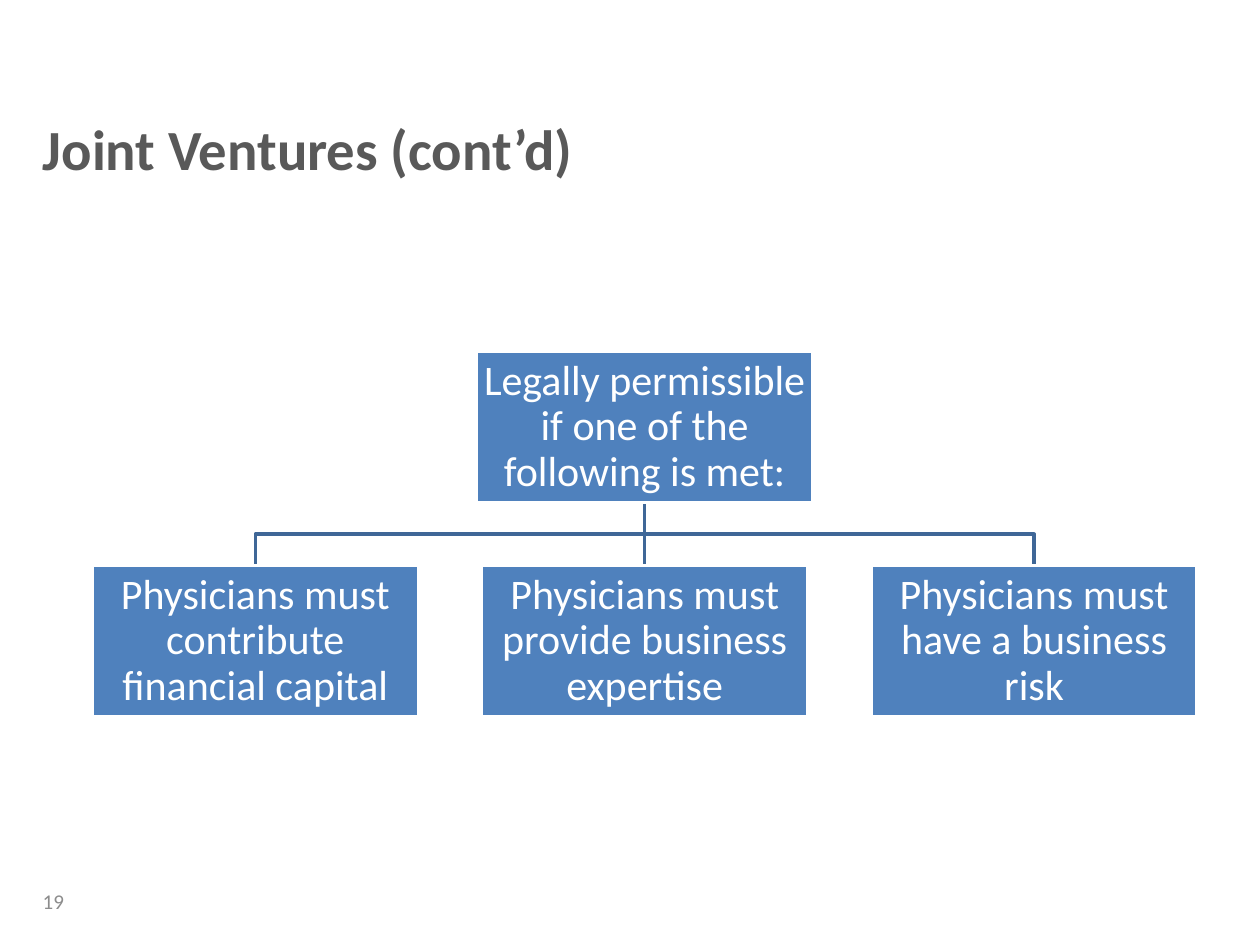
import pptx
import pptx.dml.color
import pptx.enum.shapes
import pptx.enum.text
import pptx.oxml.ns
import pptx.util
from lxml import etree

Pt = pptx.util.Pt
RGBColor = pptx.dml.color.RGBColor
PP_ALIGN = pptx.enum.text.PP_ALIGN
MSO_ANCHOR = pptx.enum.text.MSO_ANCHOR

TITLE_GRAY = RGBColor(0x59, 0x59, 0x59)
NUMBER_GRAY = RGBColor(0x8C, 0x8C, 0x8C)
BOX_BLUE = RGBColor(0x4F, 0x81, 0xBD)
LINE_BLUE = RGBColor(0x3F, 0x67, 0x97)
WHITE = RGBColor(0xFF, 0xFF, 0xFF)

CENTER_X = 368.4
BOX_HEIGHT = 86.4
ROOT_TOP, ROOT_WIDTH = 200.9, 192.2
CHILD_TOP, CHILD_WIDTH, CHILD_STEP = 323.3, 186.5, 222.5
ROOT_BOTTOM = ROOT_TOP + BOX_HEIGHT

ROOT_TEXT = "Legally permissible if one of the following is met:"
CHILD_TEXTS = [
    "Physicians must contribute financial capital",
    "Physicians must provide business expertise",
    "Physicians must have a business risk",
]


def set_text(sp, text, size, color, align=PP_ALIGN.LEFT, anchor=MSO_ANCHOR.MIDDLE):
    tf = sp.text_frame
    tf.word_wrap = True
    tf.auto_size = pptx.enum.text.MSO_AUTO_SIZE.NONE
    tf.vertical_anchor = anchor
    p = tf.paragraphs[0]
    p.text = text
    p.alignment = align
    p.font.name = "Calibri"
    p.font.size = Pt(size)
    p.font.color.rgb = color
    return p


def add_title(s, text):
    sp = s.shapes.title
    sp.left, sp.top, sp.width, sp.height = Pt(17.3), Pt(64.8), Pt(666.7), Pt(78.5)
    p = set_text(sp, text, 32.4, TITLE_GRAY, anchor=MSO_ANCHOR.TOP)
    p.font.bold = True
    sp.text_frame.margin_top = 0


def add_slide_number(s, text):
    sp = s.shapes.add_textbox(Pt(17.3), Pt(500.4), Pt(142.6), Pt(28.8))
    set_text(sp, text, 12, NUMBER_GRAY)


def add_box(s, center_x, top, width, text):
    sp = s.shapes.add_shape(
        pptx.enum.shapes.MSO_SHAPE.RECTANGLE,
        Pt(center_x - width / 2), Pt(top), Pt(width), Pt(BOX_HEIGHT))
    sp.shadow.inherit = False
    sp.fill.solid()
    sp.fill.fore_color.rgb = BOX_BLUE
    sp.line.color.rgb = WHITE
    sp.line.width = Pt(2)
    p = set_text(sp, text, 24, WHITE, PP_ALIGN.CENTER)
    p.line_spacing = 0.9
    tf = sp.text_frame
    tf.margin_left = tf.margin_right = tf.margin_top = tf.margin_bottom = Pt(1.2)
    return sp


def style_line(sp):
    sp.line.color.rgb = LINE_BLUE
    sp.line.width = Pt(2)


def add_branch(s, child_x):
    """Draw the bent line from under the root box to an outer child box."""
    middle = (ROOT_BOTTOM + CHILD_TOP) / 2
    builder = s.shapes.build_freeform(Pt(CENTER_X), Pt(ROOT_BOTTOM))
    builder.add_line_segments(
        [(Pt(CENTER_X), Pt(middle)), (Pt(child_x), Pt(middle)),
         (Pt(child_x), Pt(CHILD_TOP))], close=False)
    sp = builder.convert_to_shape()
    sp.shadow.inherit = False
    sp.fill.background()
    style_line(sp)


def add_stem(s):
    """Draw the straight line from the root box to the middle child box."""
    sp = s.shapes.add_connector(
        pptx.enum.shapes.MSO_CONNECTOR.STRAIGHT,
        Pt(CENTER_X), Pt(ROOT_BOTTOM), Pt(CENTER_X), Pt(CHILD_TOP))
    style_line(sp)
    etree.SubElement(sp._element.spPr, pptx.oxml.ns.qn("a:effectLst"))
    return sp


def add_hierarchy(s):
    child_xs = [CENTER_X + i * CHILD_STEP for i in (-1, 0, 1)]
    # Lines come first so that the white box borders cover their ends.
    add_branch(s, child_xs[2])
    stem = add_stem(s)
    add_branch(s, child_xs[0])
    root = add_box(s, CENTER_X, ROOT_TOP, ROOT_WIDTH, ROOT_TEXT)
    children = [add_box(s, x, CHILD_TOP, CHILD_WIDTH, text)
                for x, text in zip(child_xs, CHILD_TEXTS)]
    stem.begin_connect(root, 2)
    stem.end_connect(children[1], 0)


def main():
    prs = pptx.Presentation()
    prs.slide_width, prs.slide_height = Pt(720), Pt(540)
    s = prs.slides.add_slide(prs.slide_layouts[5])
    add_title(s, "Joint Ventures (cont’d)")
    add_slide_number(s, "19")
    add_hierarchy(s)
    prs.save("out.pptx")


if __name__ == "__main__":
    main()
